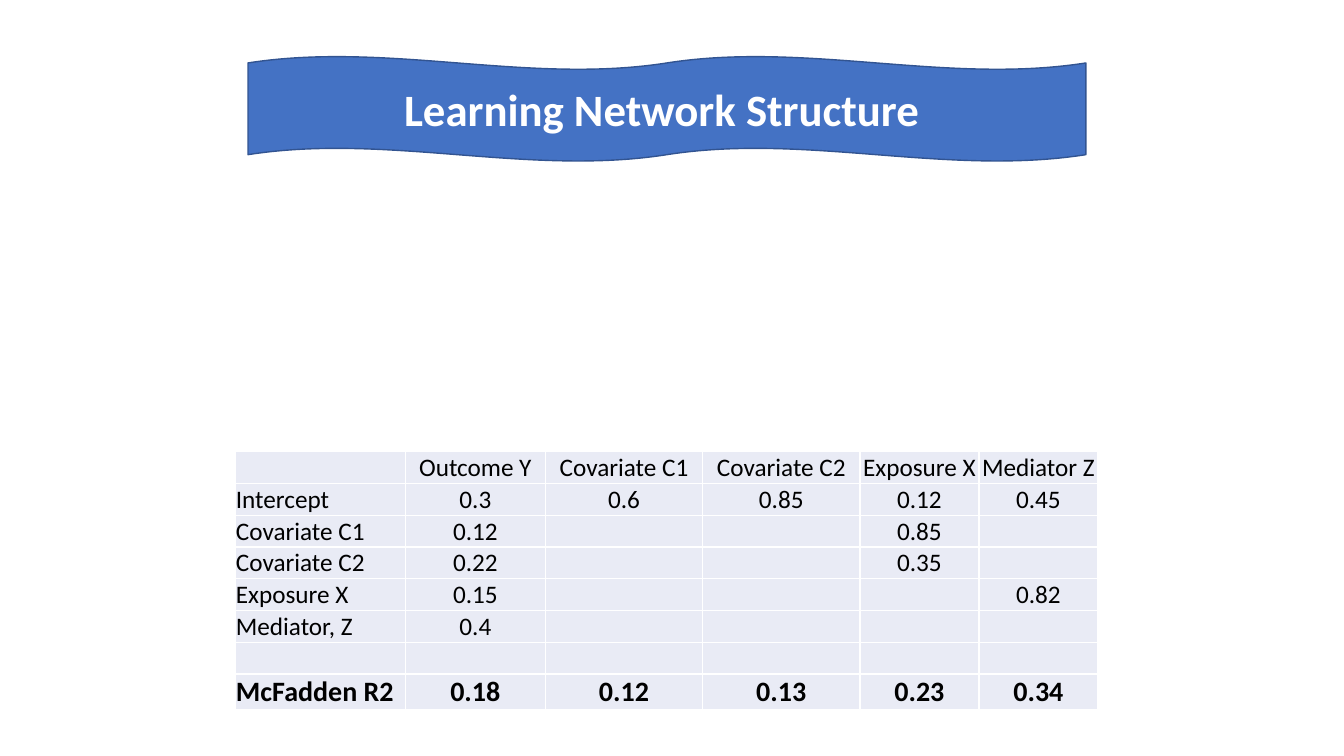
from pptx import Presentation
from pptx.dml.color import RGBColor
from pptx.enum.shapes import MSO_SHAPE
from pptx.enum.text import MSO_ANCHOR, PP_ALIGN
from pptx.oxml import parse_xml
from pptx.oxml.ns import nsdecls
from pptx.util import Inches, Pt


def color(hex_value):
    return RGBColor.from_string(hex_value)


def write(frame, text, size=18, bold=False, ink="000000", align=PP_ALIGN.CENTER):
    paragraph = frame.paragraphs[0]
    paragraph.alignment = align
    run = paragraph.add_run()
    run.text = text
    run.font.name = "Calibri"
    run.font.size = Pt(size)
    run.font.bold = bold
    run.font.color.rgb = color(ink)


prs = Presentation()
prs.slide_width = Inches(13.33)
prs.slide_height = Inches(7.5)
slide = prs.slides.add_slide(prs.slide_layouts[6])

# Heading banner
banner = slide.shapes.add_shape(
    MSO_SHAPE.DOUBLE_WAVE, Inches(2.46), Inches(0.56), Inches(8.31), Inches(1.04))
banner.shadow.inherit = False
banner.fill.solid()
banner.fill.fore_color.rgb = color("4472C4")
banner.line.color.rgb = color("325491")
banner.line.width = Pt(1)
banner.text_frame.word_wrap = True
banner.text_frame.vertical_anchor = MSO_ANCHOR.MIDDLE
write(banner.text_frame, "Learning Network Structure ", size=32, bold=True, ink="FFFFFF")

# Coefficients of each regression, one column per response
coefficients = [
    ["", "Outcome Y", "Covariate C1", "Covariate C2", "Exposure X", "Mediator Z"],
    ["Intercept", "0.3", "0.6", "0.85", "0.12", "0.45"],
    ["Covariate C1", "0.12", "", "", "0.85", ""],
    ["Covariate C2", "0.22", "", "", "0.35", ""],
    ["Exposure X", "0.15", "", "", "", "0.82"],
    ["Mediator, Z", "0.4", "", "", "", ""],
    ["", "", "", "", "", ""],
    ["McFadden R2", "0.18", "0.12", "0.13", "0.23", "0.34"],
]
column_widths = [1.69, 1.39, 1.56, 1.56, 1.18, 1.18]
fit_row = len(coefficients) - 1

table = slide.shapes.add_table(
    len(coefficients), len(column_widths),
    Inches(2.33), Inches(4.48), Inches(sum(column_widths)), Inches(2.49)).table
table.first_row = False
table.horz_banding = False
for column, width in zip(table.columns, column_widths):
    column.width = Inches(width)

for r, values in enumerate(coefficients):
    is_fit = r == fit_row
    table.rows[r].height = Inches(0.34 if is_fit else 0.31)
    for c, value in enumerate(values):
        cell = table.cell(r, c)
        cell.margin_left = cell.margin_right = cell.margin_top = Inches(0.01)
        cell.margin_bottom = 0
        cell.vertical_anchor = MSO_ANCHOR.BOTTOM
        if value:
            write(cell.text_frame, value, size=20 if is_fit else 18, bold=is_fit,
                  align=PP_ALIGN.CENTER if c else PP_ALIGN.LEFT)
        # White borders come before the fill in the cell properties
        for side in ("lnL", "lnR", "lnT", "lnB"):
            cell._tc.get_or_add_tcPr().append(parse_xml(
                f'<a:{side} {nsdecls("a")} w="12700"><a:solidFill>'
                f'<a:srgbClr val="FFFFFF"/></a:solidFill></a:{side}>'))
        cell.fill.solid()
        cell.fill.fore_color.rgb = color("E9EBF5")

prs.save("out.pptx")
